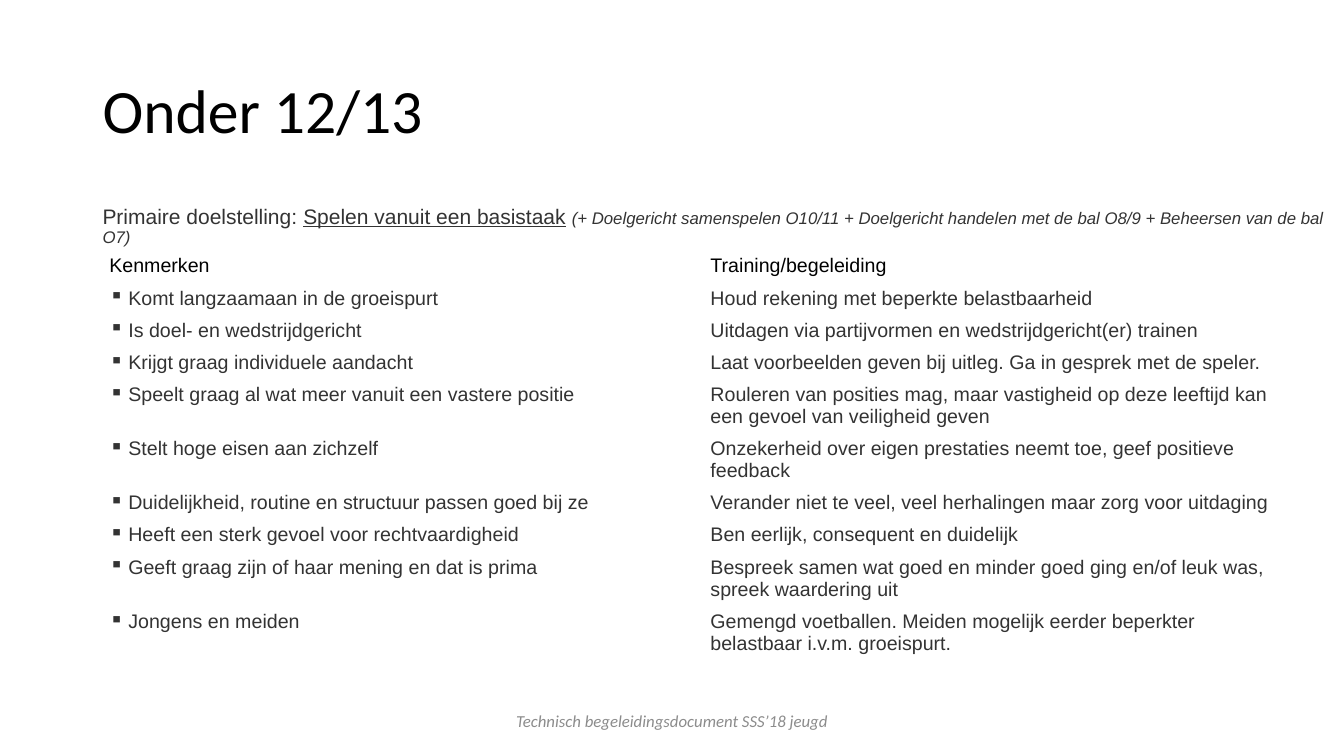
from dataclasses import dataclass

from lxml import etree
from pptx import Presentation
from pptx import util as u
from pptx.dml.color import RGBColor
from pptx.enum import text
from pptx.oxml import ns


@dataclass(frozen=True)
class Theme:
    heading_font: str = "Calibri"
    body_font: str = "Arial"
    black: str = "000000"
    dark: str = "333333"
    grey: str = "8C8C8C"
    title_size: int = 44
    goal_size: int = 15
    table_size: int = 14
    small_size: int = 12


THEME = Theme()

HEADINGS = ("Kenmerken", "Training/begeleiding")
# Trait, guidance, number of lines the guidance takes
ROWS = [
    ("Komt langzaamaan in de groeispurt", "Houd rekening met beperkte belastbaarheid", 1),
    ("Is doel- en wedstrijdgericht",
     "Uitdagen via partijvormen en wedstrijdgericht(er) trainen", 1),
    ("Krijgt graag individuele aandacht",
     "Laat voorbeelden geven bij uitleg. Ga in gesprek met de speler.", 1),
    ("Speelt graag al wat meer vanuit een vastere positie",
     "Rouleren van posities mag, maar vastigheid op deze leeftijd kan "
     "een gevoel van veiligheid geven", 2),
    ("Stelt hoge eisen aan zichzelf",
     "Onzekerheid over eigen prestaties neemt toe, geef positieve feedback", 2),
    ("Duidelijkheid, routine en structuur passen goed bij ze",
     "Verander niet te veel, veel herhalingen maar zorg voor uitdaging", 1),
    ("Heeft een sterk gevoel voor rechtvaardigheid",
     "Ben eerlijk, consequent en duidelijk", 1),
    ("Geeft graag zijn of haar mening en dat is prima",
     "Bespreek samen wat goed en minder goed ging en/of leuk was, "
     "spreek waardering uit", 2),
    ("Jongens en meiden",
     "Gemengd voetballen. Meiden mogelijk eerder beperkter "
     "belastbaar i.v.m. groeispurt.", 2),
]


def place(shape, box):
    shape.left, shape.top, shape.width, shape.height = (u.Cm(v) for v in box)


def add_span(para, wording, size, color, font=THEME.body_font, italic=False, underline=False):
    span = para.add_run()
    span.text = wording
    span.font.name = font
    span.font.size = u.Pt(size)
    span.font.color.rgb = RGBColor.from_string(color)
    span.font.bold = False
    span.font.italic = italic
    span.font.underline = underline


def set_bullet(para, char=None, indent=0):
    properties = para._p.get_or_add_pPr()
    properties.set("marL", str(u.Cm(indent)))
    properties.set("indent", str(-u.Cm(indent)))
    bullet = etree.SubElement(properties, ns.qn("a:buChar" if char else "a:buNone"))
    if char:
        bullet.set("char", char)


def add_title(page, box):
    title = page.shapes.title
    place(title, box)
    frame = title.text_frame
    frame.auto_size = text.MSO_AUTO_SIZE.NONE
    frame.vertical_anchor = text.MSO_ANCHOR.MIDDLE
    para = frame.paragraphs[0]
    para.alignment = text.PP_ALIGN.LEFT
    para.line_spacing = 0.9
    add_span(para, "Onder 12/13", THEME.title_size, THEME.black, THEME.heading_font)


def add_goal(page, box):
    body = page.placeholders[1]
    place(body, box)
    body.text_frame.auto_size = text.MSO_AUTO_SIZE.NONE
    para = body.text_frame.paragraphs[0]
    set_bullet(para)
    para.line_spacing = 0.9
    para.space_before = u.Pt(0)
    add_span(para, "Primaire doelstelling: ", THEME.goal_size, THEME.dark)
    add_span(para, "Spelen vanuit een basistaak", THEME.goal_size, THEME.dark, underline=True)
    add_span(para, " ", THEME.goal_size, THEME.dark)
    add_span(para, "(+ Doelgericht samenspelen O10/11 + Doelgericht handelen met de bal O8/9 "
             "+ Beheersen van de bal O7)", THEME.small_size, THEME.dark, italic=True)


def add_traits_table(page, box):
    lines = [1] + [row[2] for row in ROWS]
    table = page.shapes.add_table(len(lines), 2, *(u.Cm(v) for v in box)).table
    table.first_row = table.horz_banding = False
    for column in table.columns:
        column.width = u.Cm(box[2] / 2)
    for row, count in zip(table.rows, lines):
        row.height = u.Cm(0.26 + 0.55 * count)

    for r, wordings in enumerate([HEADINGS] + [row[:2] for row in ROWS]):
        for c, wording in enumerate(wordings):
            cell = table.cell(r, c)
            cell.fill.background()
            para = cell.text_frame.paragraphs[0]
            if r and c == 0:
                set_bullet(para, "▪", 0.48)
            add_span(para, wording, THEME.table_size, THEME.dark if r else THEME.black)


def add_footer(page, box):
    footer = page.shapes.add_textbox(*(u.Cm(v) for v in box))
    frame = footer.text_frame
    frame.word_wrap = True
    frame.vertical_anchor = text.MSO_ANCHOR.MIDDLE
    para = frame.paragraphs[0]
    para.alignment = text.PP_ALIGN.CENTER
    add_span(para, "Technisch begeleidingsdocument SSS’18 jeugd", THEME.small_size,
             THEME.grey, THEME.heading_font, italic=True)


def main():
    deck = Presentation()
    deck.slide_width, deck.slide_height = u.Cm(33.87), u.Cm(19.05)
    page = deck.slides.add_slide(deck.slide_layouts[1])
    # Boxes: left, top, width, height in cm
    add_title(page, (2.33, 1.01, 29.21, 3.68))
    add_goal(page, (2.33, 5.07, 31.54, 12.09))
    add_traits_table(page, (2.5, 6.3, 30.3, 10.3))
    add_footer(page, (11.22, 17.66, 11.43, 1.01))
    deck.save("out.pptx")


if __name__ == "__main__":
    main()
